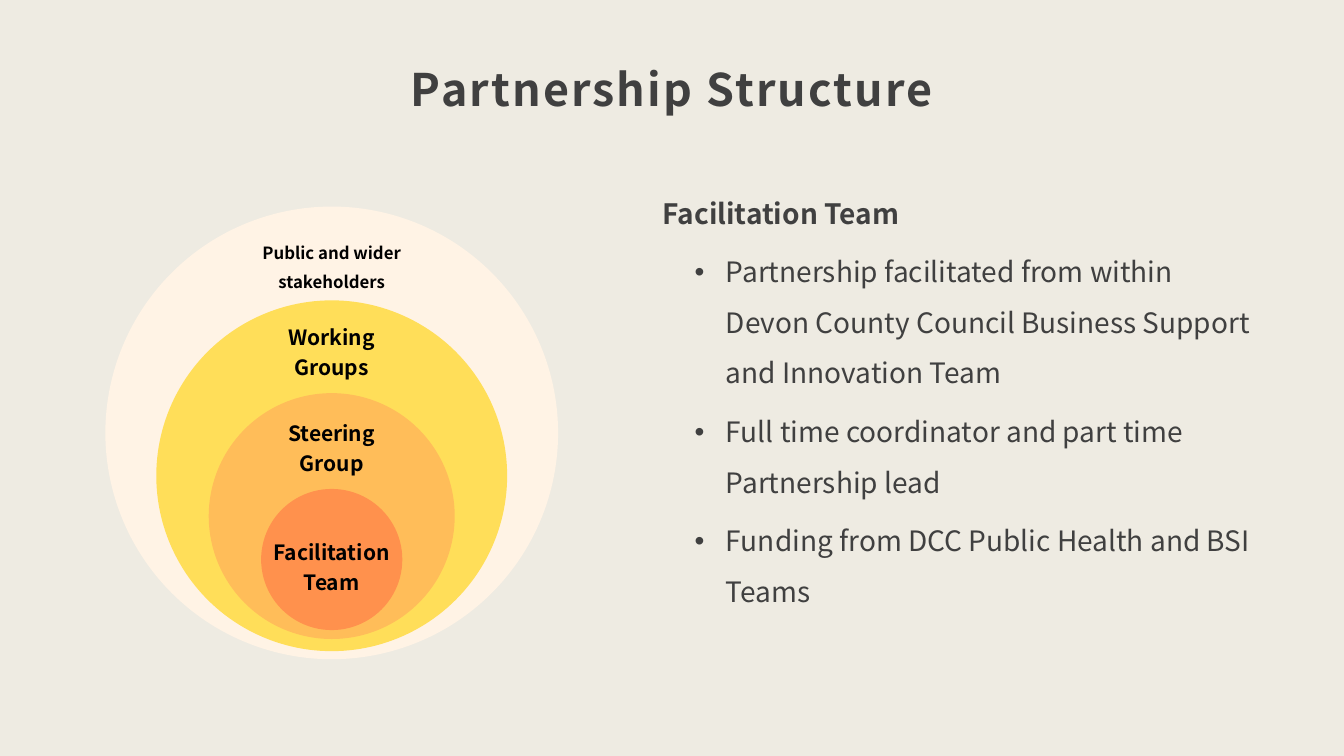
from lxml import etree
from pptx import Presentation
from pptx import util as u
from pptx.dml.color import RGBColor
from pptx.enum import shapes, text
from pptx.oxml.ns import qn

WIDTH, HEIGHT = u.Inches(13.33), u.Inches(7.5)
FONT = "Noto Sans CJK JP"
COLOURS = {"page": "EEEBE2", "ink": "404040", "label": "000000",
           "public": "FFF3E5", "working": "FFDE59",
           "steering": "FFBD59", "facilitation": "FF914D"}
RING_CENTRE = 24.68
RINGS = [("public", 27.33, 59.87), ("working", 39.73, 46.4),
         ("steering", 52, 32.53), ("facilitation", 64.67, 18.67)]
LABELS = [("Facilitation Team", 70.8, 9.45, 15), ("Steering Group", 55.07, 9.45, 15),
          ("Working Groups", 42.4, 9.45, 15),
          ("Public and wider stakeholders", 30.8, 12.75, 12)]
POINTS = ["Partnership facilitated from within Devon County Council Business Support and Innovation Team",
          "Full time coordinator and part time Partnership lead",
          "Funding from DCC Public Health and BSI Teams"]


def across(percent):
    """Turn a percentage of the slide's width into a length."""
    return u.Emu(round(WIDTH * percent / 100))


def down(percent):
    """Turn a percentage of the slide's height into a length."""
    return u.Emu(round(HEIGHT * percent / 100))


def colour(name):
    """Look up a named colour."""
    return RGBColor.from_string(COLOURS[name])


def set_frame(frame, anchor, sides=0.12, bottom=0.1):
    """Set wrapping, anchor and margins of a text frame."""
    frame.word_wrap = True
    frame.auto_size = text.MSO_AUTO_SIZE.NONE
    frame.vertical_anchor = anchor
    frame.margin_left = frame.margin_right = frame.margin_top = u.Inches(sides)
    frame.margin_bottom = u.Inches(bottom)


def write(para, wording, size, ink, spacing, bold=True, align=text.PP_ALIGN.LEFT):
    """Fill and format one paragraph, returning its run."""
    span = para.add_run()
    span.text = wording
    para.alignment = align
    para.line_spacing = spacing
    font = para.font
    font.name, font.size, font.bold = FONT, u.Pt(size), bold
    font.color.rgb = colour(ink)
    return span


def add_bullet(para):
    """Give a paragraph a hanging bullet."""
    para.level = 1
    properties = para._p.get_or_add_pPr()
    properties.set("marL", str(u.Inches(0.63)))
    properties.set("indent", str(u.Inches(-0.31)))
    etree.SubElement(properties, qn("a:buFont")).set("typeface", "Arial")
    etree.SubElement(properties, qn("a:buChar")).set("char", "•")


def add_title(page):
    """Place and format the slide's title."""
    title = page.shapes.title
    title.left, title.top = across(14.03), down(-2.93)
    title.width, title.height = across(71.94), down(19.6)
    set_frame(title.text_frame, text.MSO_ANCHOR.BOTTOM)
    span = write(title.text_frame.paragraphs[0], "Partnership Structure", 32, "ink", 1.3,
                 align=text.PP_ALIGN.CENTER)
    span._r.get_or_add_rPr().set("spc", "150")


def add_ring(page, name, top, diameter):
    """Draw one of the nested circles."""
    side = down(diameter)
    left = across(RING_CENTRE) - side // 2
    ring = page.shapes.add_shape(shapes.MSO_SHAPE.OVAL, left, down(top), side, side)
    ring.shadow.inherit = False
    ring.fill.solid()
    ring.fill.fore_color.rgb = colour(name)
    ring.line.fill.background()


def add_label(page, wording, top, width, size):
    """Write the name of a circle."""
    box = page.shapes.add_textbox(across(RING_CENTRE - width / 2), down(top),
                                  across(width), down(7.87))
    set_frame(box.text_frame, text.MSO_ANCHOR.TOP, 0, 0)
    box.text_frame.auto_size = text.MSO_AUTO_SIZE.SHAPE_TO_FIT_TEXT
    write(box.text_frame.paragraphs[0], wording, size, "label", u.Pt(21.2),
          align=text.PP_ALIGN.CENTER)


def add_details(page, heading, points):
    """Write a heading followed by bulleted points."""
    box = page.shapes.add_textbox(across(48.39), down(22.13), across(45.91), down(65.07))
    frame = box.text_frame
    set_frame(frame, text.MSO_ANCHOR.TOP)
    write(frame.paragraphs[0], heading, 20, "ink", 1.5)
    for point in points:
        para = frame.add_paragraph()
        para.space_before = u.Pt(6)
        add_bullet(para)
        write(para, point, 20, "ink", 1.5, bold=False)


def main():
    """Build the slide and save the deck."""
    deck = Presentation()
    deck.slide_width, deck.slide_height = WIDTH, HEIGHT
    page = deck.slides.add_slide(deck.slide_layouts.get_by_name("Title Only"))
    page.background.fill.solid()
    page.background.fill.fore_color.rgb = colour("page")
    add_title(page)
    add_details(page, "Facilitation Team", POINTS)
    for ring in RINGS:
        add_ring(page, *ring)
    for label in LABELS:
        add_label(page, *label)
    deck.save("out.pptx")


if __name__ == "__main__":
    main()
